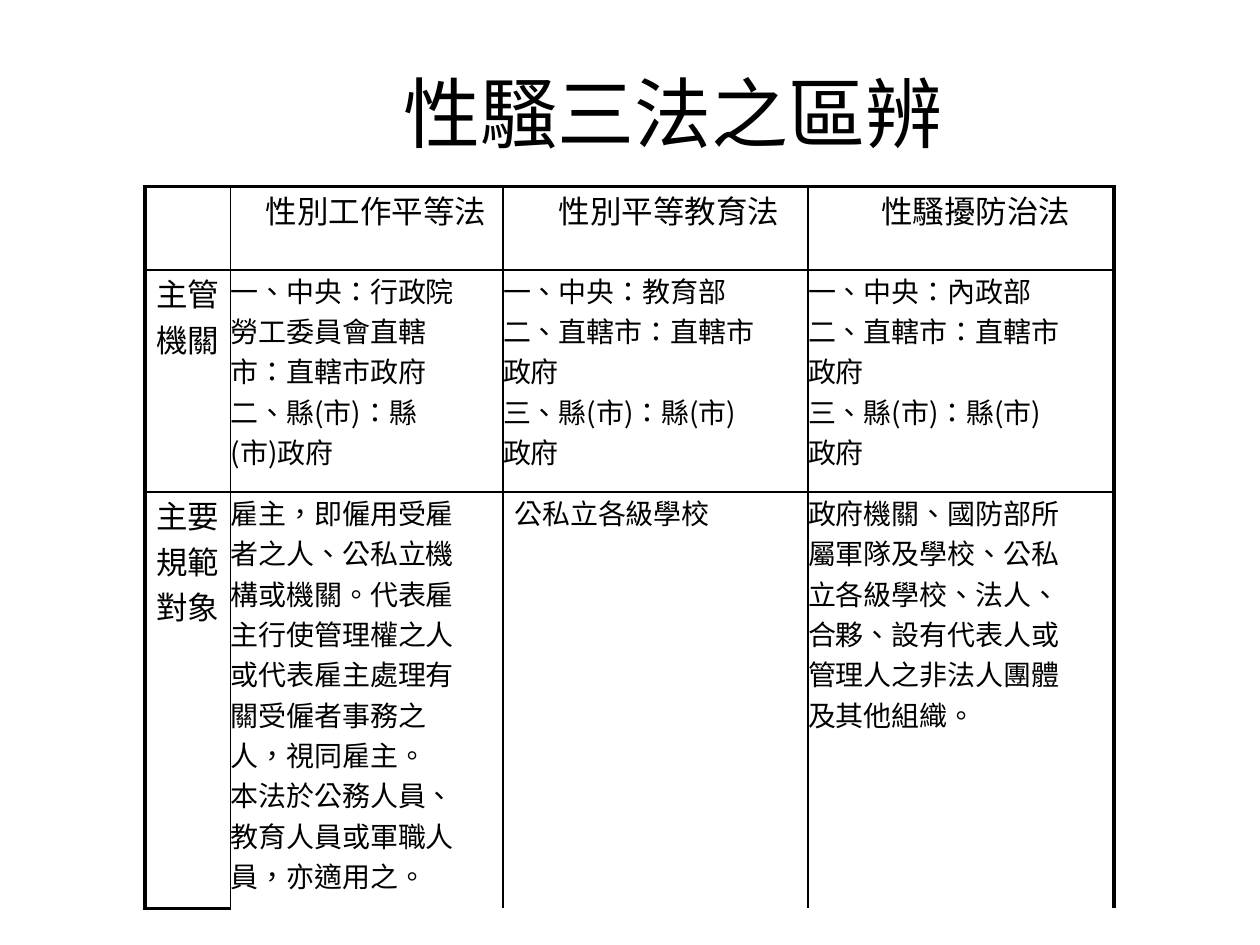
import pptx
import pptx.dml.color
import pptx.enum.text
import pptx.oxml
import pptx.oxml.ns
import pptx.util
from pptx.util import Cm, Pt

SC, TC = "Noto Sans CJK SC", "Noto Sans CJK TC"
BLACK = "000000"
THICK, THIN = 2.25, 1

COL_WIDTHS = [1.73, 5.49, 6.15, 6.17]
ROW_HEIGHTS = [1.68, 0.91, 3.56, 0.91, 0.76, 6.55]
ROW_GROUPS = [(0, 0), (1, 2), (3, 5)]

HEADERS = [("性別工作平等法", 0.71), ("性別平等教育法", 1.12), ("性騷擾防治法", 1.47)]
LABELS = ["主管", "機關", "主要", "規範", "對象"]
LOCAL_RULES = ["二、直轄市：直轄市", "政府", "三、縣(市)：縣(市)", "政府"]
AUTHORITIES = [
    ["一、中央：行政院", "勞工委員會直轄", "市：直轄市政府", "二、縣(市)：縣", "(市)政府"],
    ["一、中央：教育部"] + LOCAL_RULES,
    ["一、中央：內政部"] + LOCAL_RULES,
]
SUBJECTS = [
    ["雇主，即僱用受雇", "者之人、公私立機", "構或機關。代表雇", "主行使管理權之人",
     "或代表雇主處理有", "關受僱者事務之", "人，視同雇主。", "本法於公務人員、",
     "教育人員或軍職人", "員，亦適用之。"],
    ["公私立各級學校"],
    ["政府機關、國防部所", "屬軍隊及學校、公私", "立各級學校、法人、",
     "合夥、設有代表人或", "管理人之非法人團體", "及其他組織。"],
]


def color(value):
    return pptx.dml.color.RGBColor.from_string(value)


class SlideBuilder:
    def __init__(self, prs):
        self.slide = prs.slides.add_slide(prs.slide_layouts[5])

    def text(self, tf, lines, size, font=SC, indent=0, align=pptx.enum.text.PP_ALIGN.LEFT):
        for i, line in enumerate(lines):
            p = tf.add_paragraph() if i else tf.paragraphs[0]
            p.alignment = align
            pPr = p._p.get_or_add_pPr()
            pPr.set("marL", str(Cm(indent)))
            pPr.set("indent", "0")
            r = p.add_run()
            r.text = line
            r.font.size = Pt(size)
            r.font.name = font
            r.font.color.rgb = color(BLACK)
            rPr = r._r.get_or_add_rPr()
            rPr.set("lang", "zh-TW")
            ea = pptx.oxml.parse_xml(f'<a:ea {pptx.oxml.ns.nsdecls("a")} typeface="{font}"/>')
            rPr.find(pptx.oxml.ns.qn("a:latin")).addnext(ea)

    def title(self, text):
        sp = self.slide.shapes.title
        sp.left, sp.top, sp.width, sp.height = Cm(2.9), Cm(1.12), Cm(18.16), Cm(2.08)
        tf = sp.text_frame
        tf.margin_left = tf.margin_right = tf.margin_bottom = 0
        tf.margin_top = Cm(0.2)
        tf.vertical_anchor = pptx.enum.text.MSO_ANCHOR.MIDDLE
        self.text(tf, [text], 44, indent=3.18, align=pptx.enum.text.PP_ALIGN.CENTER)

    def border(self, cell, widths):
        """Draw the four sides; a width of 0 hides that side."""
        tcPr = cell._tc.get_or_add_tcPr()
        for side, width in zip("LRTB", widths):
            fill = f'<a:solidFill><a:srgbClr val="{BLACK}"/></a:solidFill>' if width else "<a:noFill/>"
            tcPr.append(pptx.oxml.parse_xml(
                f'<a:ln{side} {pptx.oxml.ns.nsdecls("a")} w="{Pt(width)}">{fill}</a:ln{side}>'))

    def table(self, left, top):
        rows, cols = len(ROW_HEIGHTS), len(COL_WIDTHS)
        frame = self.slide.shapes.add_table(
            rows, cols, Cm(left), Cm(top), Cm(sum(COL_WIDTHS)), Cm(sum(ROW_HEIGHTS)))
        table = frame.table
        table.first_row = table.horz_banding = False
        for column, width in zip(table.columns, COL_WIDTHS):
            column.width = Cm(width)
        for row, height in zip(table.rows, ROW_HEIGHTS):
            row.height = Cm(height)
        for first, last in ROW_GROUPS:
            for r in range(first, last + 1):
                for c in range(cols):
                    cell = table.cell(r, c)
                    cell.margin_left = cell.margin_right = 0
                    cell.margin_top = cell.margin_bottom = 0
                    self.border(cell, (
                        THIN if c else THICK,
                        THICK if c == cols - 1 else THIN,
                        0 if r > first else THIN if r else THICK,
                        0 if r < last else THICK if r == rows - 1 else THIN))
                    cell.fill.background()
            if last > first:
                for c in range(1, cols):
                    table.cell(first, c).merge(table.cell(last, c))
        return table


def main():
    prs = pptx.Presentation()
    prs.slide_width, prs.slide_height = Cm(25.4), Cm(19.05)
    s = SlideBuilder(prs)
    s.title("性騷三法之區辨")
    table = s.table(2.92, 3.76)
    for c, (text, indent) in enumerate(HEADERS, 1):
        s.text(table.cell(0, c).text_frame, [text], 18, indent=indent)
    for r, text in enumerate(LABELS, 1):
        s.text(table.cell(r, 0).text_frame, [text], 18, TC, 0.23)
    for (first, _), contents in zip(ROW_GROUPS[1:], (AUTHORITIES, SUBJECTS)):
        for c, lines in enumerate(contents, 1):
            indent = 0.23 if len(lines) == 1 else 0
            s.text(table.cell(first, c).text_frame, lines, 16, indent=indent)
    prs.save("out.pptx")


if __name__ == "__main__":
    main()
